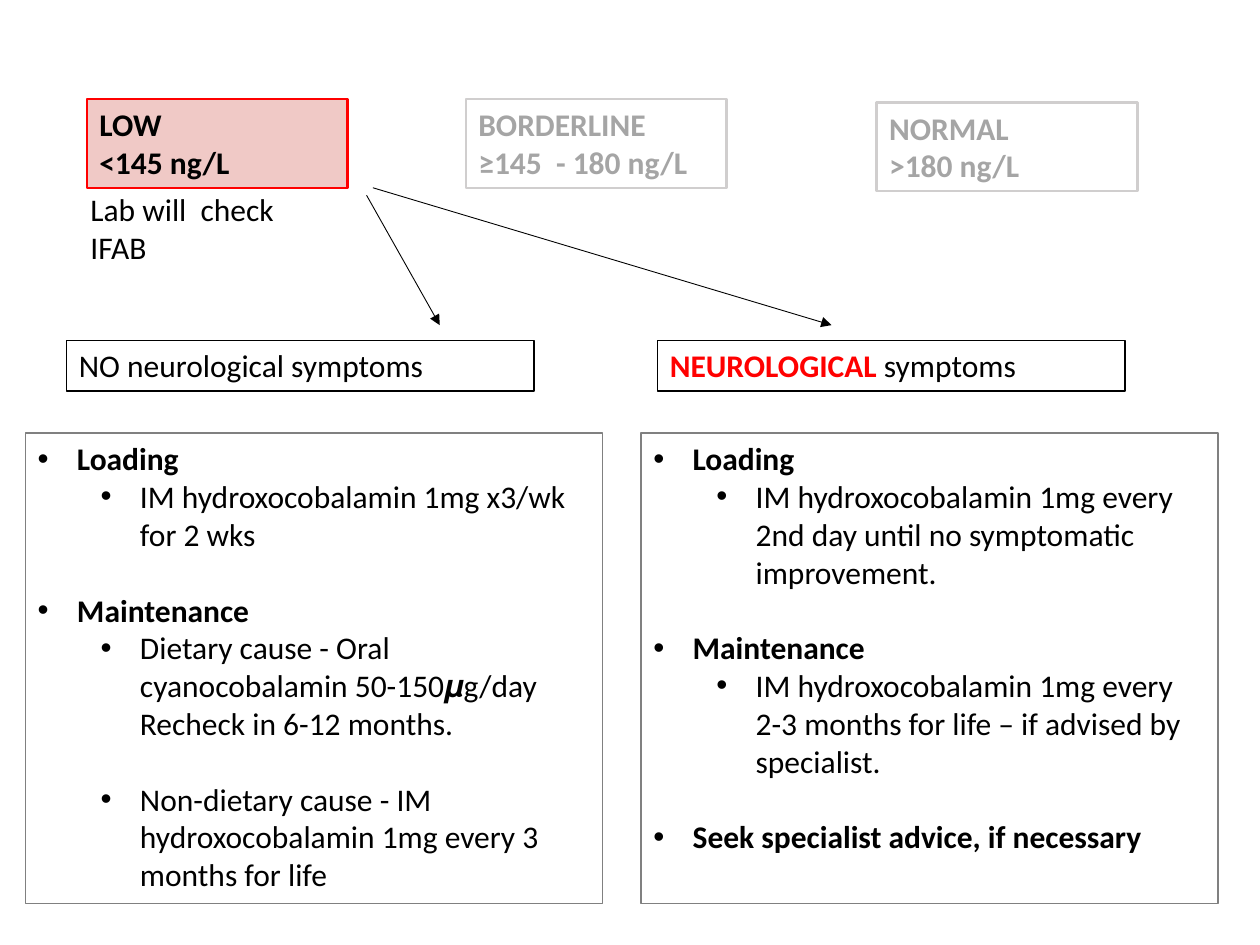
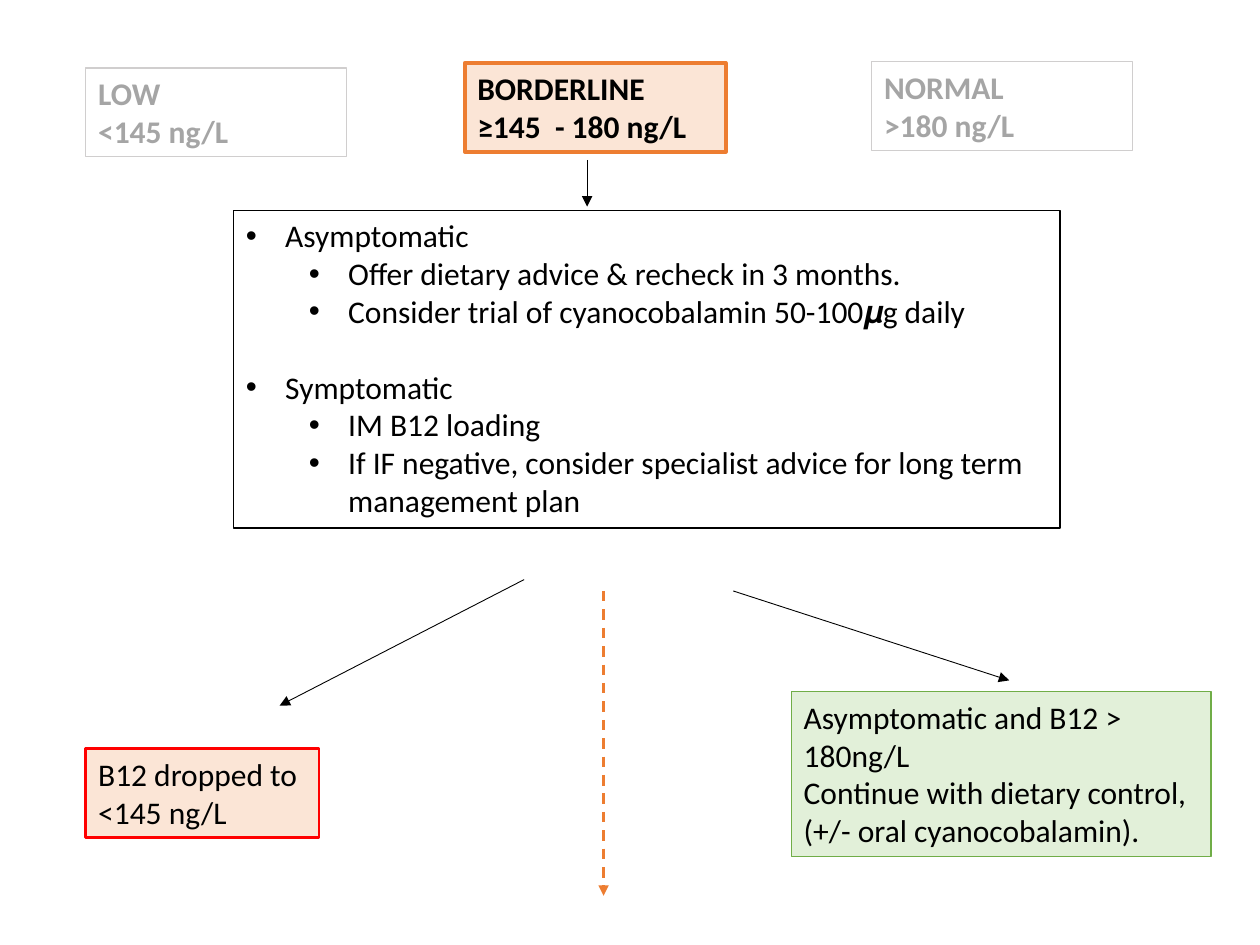
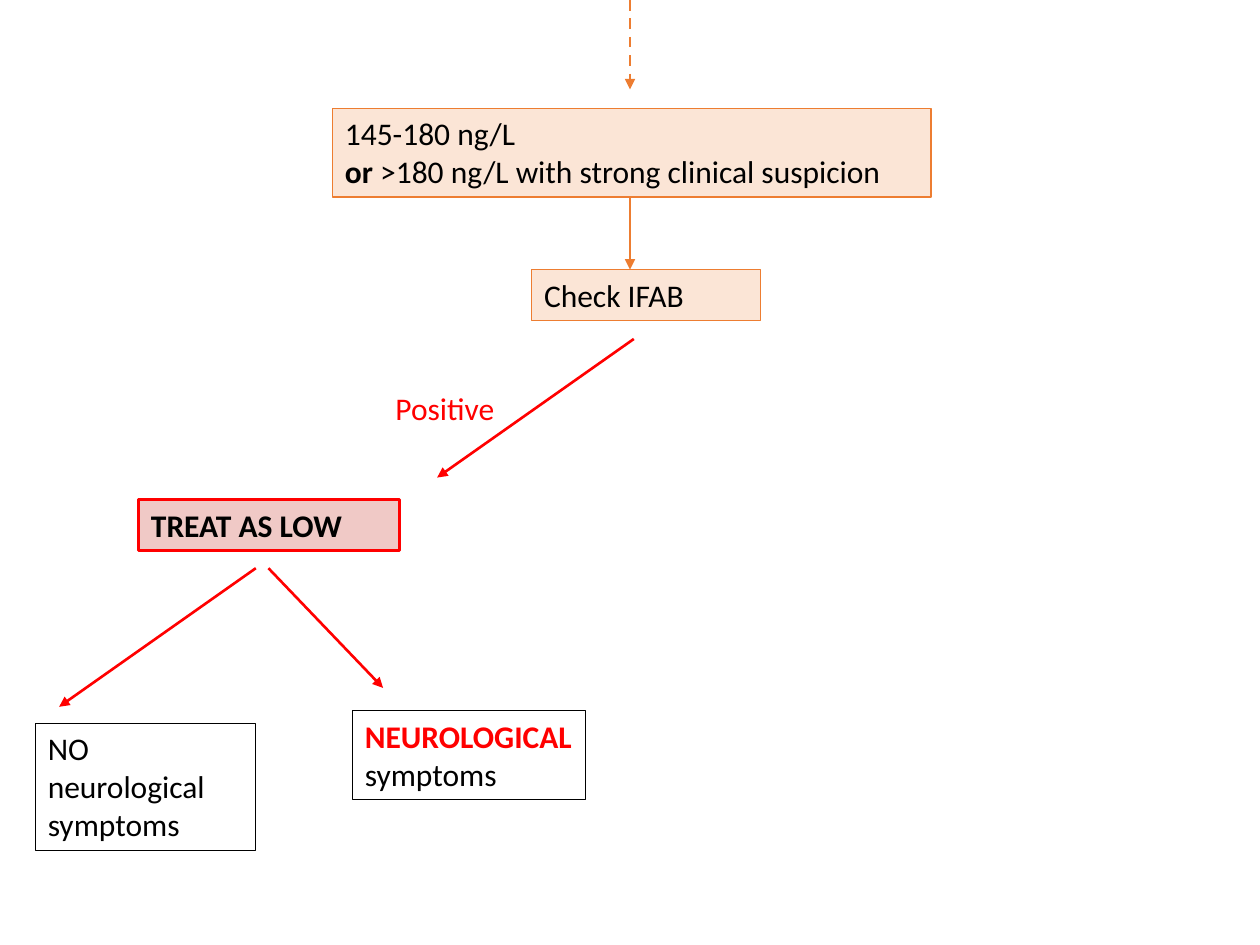
from pptx import Presentation
from pptx.dml.color import RGBColor
from pptx.enum import dml, shapes, text
from pptx.oxml.ns import qn
from pptx.util import Pt
from lxml import etree

BLACK = RGBColor(0, 0, 0)
RED = RGBColor(0xFF, 0, 0)
PINK = RGBColor(0xF0, 0xC9, 0xC6)
ORANGE = RGBColor(0xED, 0x7D, 0x31)
PEACH = RGBColor(0xFB, 0xE5, 0xD6)
GREEN = RGBColor(0x70, 0xAD, 0x47)
MINT = RGBColor(0xE2, 0xF0, 0xD9)
GREY = RGBColor(0x80, 0x80, 0x80)
FAINT = RGBColor(0xA5, 0xA5, 0xA5)
PALE = RGBColor(0xD0, 0xCE, 0xCE)

FONT = "Calibri"
ROW = 21.8      # height each text line adds to a box
PAD = 7.2       # top and bottom inset together
GAP = 21.6      # space above a new group of bullets
HANG = 22.5     # bullet to text
STEP = 36       # indent of each bullet level

LEVELS = (("LOW", "<145 ng/L"),
          ("BORDERLINE", "≥145  - 180 ng/L"),
          ("NORMAL", ">180 ng/L"))


def say(para, words, color=BLACK, bold=False, size=18):
    run = para.add_run()
    run.text = words
    font = run.font
    font.name, font.size, font.bold = FONT, Pt(size), bold
    font.color.rgb = color


def paras(frame, count):
    """Give the frame's paragraphs, adding up to the count."""
    return [frame.paragraphs[0]] + [frame.add_paragraph() for _ in range(count - 1)]


def write(frame, lines, **form):
    for para, line in zip(paras(frame, len(lines)), lines):
        para.alignment = text.PP_ALIGN.LEFT
        say(para, line, **form)


def box(slide, left, top, width, rows, lines=(), fill=None, line=BLACK, weight=0.75, **form):
    """Draw a framed box as tall as its rows of text."""
    shape = slide.shapes.add_shape(shapes.MSO_SHAPE.RECTANGLE, Pt(left), Pt(top),
                                   Pt(width), Pt(rows * ROW + PAD))
    shape.shadow.inherit = False
    if fill is None:
        shape.fill.background()
    else:
        shape.fill.solid()
        shape.fill.fore_color.rgb = fill
    shape.line.color.rgb = line
    shape.line.width = Pt(weight)
    frame = shape.text_frame
    frame.word_wrap = True
    frame.vertical_anchor = text.MSO_ANCHOR.TOP
    if lines:
        write(frame, lines, **form)
    return frame


def label(slide, left, top, width, rows, words, **form):
    area = slide.shapes.add_textbox(Pt(left), Pt(top), Pt(width), Pt(rows * ROW + PAD))
    area.text_frame.word_wrap = True
    write(area.text_frame, [words], **form)


def arrow(slide, start, end, color=BLACK, weight=0.5, dash=False):
    link = slide.shapes.add_connector(shapes.MSO_CONNECTOR.STRAIGHT,
                                      *(Pt(n) for n in start + end))
    link.line.color.rgb = color
    link.line.width = Pt(weight)
    if dash:
        link.line.dash_style = dml.MSO_LINE.DASH
    props = link._element.spPr
    etree.SubElement(props.find(qn("a:ln")), qn("a:tailEnd"), type="triangle")
    etree.SubElement(props, qn("a:effectLst"))


def levels(slide, spots, active, thin, **style):
    """Draw the three result levels, with the active one in its own style."""
    faded = dict(line=PALE, weight=thin, color=FAINT)
    for index, (spot, lines) in enumerate(zip(spots, LEVELS)):
        look = style if index == active else faded
        box(slide, *spot, 149, 2, lines, bold=True, **look)


def bullets(slide, left, top, width, rows, items, line=BLACK):
    """List items of (level, words, bold, starts a group) in a framed box."""
    frame = box(slide, left, top, width, rows, line=line)
    for para, (level, words, bold, fresh) in zip(paras(frame, len(items)), items):
        para.alignment = text.PP_ALIGN.LEFT
        para.level = level
        para.space_before = Pt(GAP if fresh else 0)
        props = para._p.get_or_add_pPr()
        props.set("marL", str(Pt(HANG + STEP * level)))
        props.set("indent", str(-Pt(HANG)))
        etree.SubElement(props, qn("a:buFont"), typeface="Arial")
        etree.SubElement(props, qn("a:buChar"), char="•")
        say(para, words, bold=bold)


def signs(slide, none, some):
    """Draw the boxes without and with neurological symptoms."""
    box(slide, *none, ["NO neurological symptoms"])
    para = box(slide, *some).paragraphs[0]
    para.alignment = text.PP_ALIGN.LEFT
    say(para, "NEUROLOGICAL", color=RED, bold=True)
    say(para, " symptoms")


def low(slide):
    levels(slide, ((49.7, 56.7), (266.3, 56.7), (501, 58.5)), 0, 1.5,
           fill=PINK, line=RED, weight=1.5)
    label(slide, 44.6, 105.1, 143.3, 2, "Lab will  check IFAB")
    arrow(slide, (213.1, 107.3), (475.2, 185.8))
    arrow(slide, (209.5, 111.6), (251.3, 185.8))
    signs(slide, (38, 194.4, 267.1, 1), (375.7, 194.4, 267.1, 1))
    bullets(slide, 14.4, 247.5, 329.8, 12, [
        (0, "Loading", True, False),
        (1, "IM hydroxocobalamin 1mg x3/wk for 2 wks", False, False),
        (0, "Maintenance", True, True),
        (1, "Dietary cause - Oral cyanocobalamin 50-150𝝁g/day Recheck in 6-12 months.",
         False, False),
        (1, "Non-dietary cause - IM hydroxocobalamin 1mg every 3 months for life",
         False, True)], line=GREY)
    bullets(slide, 366.2, 247.5, 329.8, 12, [
        (0, "Loading", True, False),
        (1, "IM hydroxocobalamin 1mg every 2nd day until no symptomatic improvement.",
         False, False),
        (0, "Maintenance", True, True),
        (1, "IM hydroxocobalamin 1mg every 2-3 months for life – if advised by specialist.",
         False, False),
        (0, "Seek specialist advice, if necessary", True, True)], line=GREY)


def middle(slide):
    levels(slide, ((49, 38.8), (265.7, 36), (498.1, 35.2)), 1, 0.75,
           fill=PEACH, line=ORANGE, weight=2.25)
    arrow(slide, (335.5, 91.4), (335.5, 118.1))
    bullets(slide, 133.4, 120.2, 472.3, 8, [
        (0, "Asymptomatic", False, False),
        (1, "Offer dietary advice & recheck in 3 months.", False, False),
        (1, "Consider trial of cyanocobalamin 50-100𝝁g daily", False, False),
        (0, "Symptomatic", False, True),
        (1, "IM B12 loading", False, False),
        (1, "If IF negative, consider specialist advice for long term management plan",
         False, False)])
    arrow(slide, (299.5, 331.2), (159.8, 403.2))
    arrow(slide, (419, 337.7), (576.7, 388.8))
    arrow(slide, (344.9, 337.7), (344.9, 511.9), ORANGE, 1.5, dash=True)
    box(slide, 49, 427.9, 133.2, 2, ["B12 dropped to <145 ng/L"],
        fill=PEACH, line=RED, weight=1.5)
    box(slide, 452.2, 395.2, 239.8, 4,
        ["Asymptomatic and B12 > 180ng/L",
         "Continue with dietary control, (+/- oral cyanocobalamin)."],
        fill=MINT, line=GREEN)


def recheck(slide):
    arrow(slide, (360, 0), (360, 51.1), ORANGE, 1.5, dash=True)
    para = box(slide, 190, 61.9, 342, 2, ["145-180 ng/L"],
               fill=PEACH, line=ORANGE).add_paragraph()
    para.alignment = text.PP_ALIGN.LEFT
    say(para, "or ", bold=True)
    say(para, ">180 ng/L with strong clinical suspicion")
    arrow(slide, (360, 113), (360, 154.1), ORANGE, 1.5)
    box(slide, 303.8, 154.1, 131, 1, ["Check IFAB"], fill=PEACH, line=ORANGE)
    label(slide, 218.9, 218.9, 97.9, 1, "Positive", color=RED)
    box(slide, 79.2, 285.6, 149, 1, ["TREAT AS LOW"],
        fill=PINK, line=RED, weight=1.5, bold=True)
    for start, end in (((362.2, 193.7), (249.8, 272.9)),
                       ((146.2, 324.7), (33.8, 403.9)),
                       ((153.4, 324.7), (218.9, 393.1))):
        arrow(slide, start, end, RED, 1.5)
    signs(slide, (20.2, 413.3, 126, 3), (201.4, 406.1, 133.2, 2))


def main():
    deck = Presentation()
    deck.slide_width, deck.slide_height = Pt(720), Pt(540)
    for build in (low, middle, recheck):
        build(deck.slides.add_slide(deck.slide_layouts[6]))
    deck.save("out.pptx")


if __name__ == "__main__":
    main()
